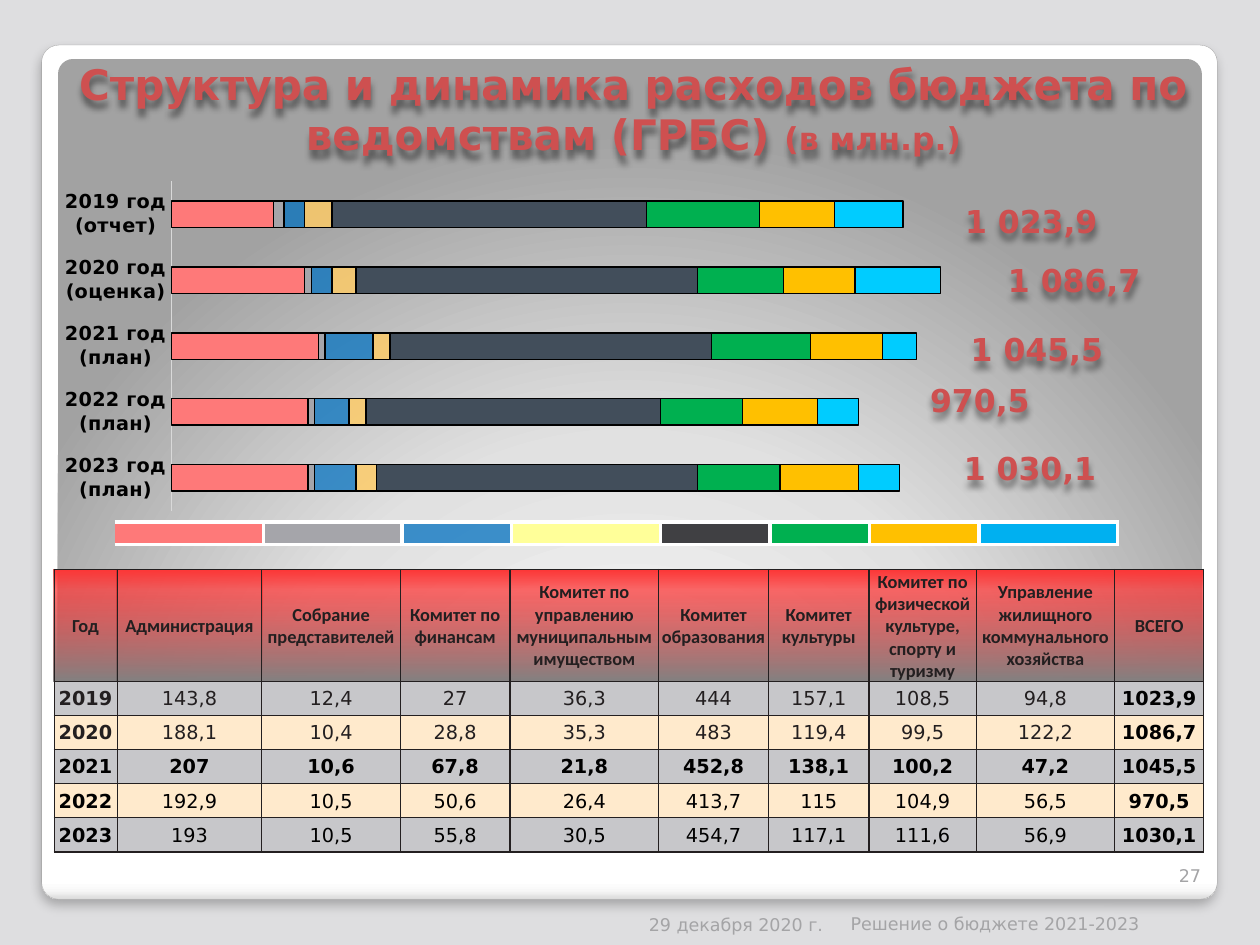
from lxml.etree import SubElement
from pptx import Presentation
from pptx.chart.data import CategoryChartData
from pptx.dml.color import RGBColor
from pptx.enum.chart import XL_CHART_TYPE, XL_TICK_MARK
from pptx.enum.shapes import MSO_SHAPE
from pptx.enum.text import MSO_ANCHOR, MSO_AUTO_SIZE, PP_ALIGN
from pptx.oxml import parse_xml
from pptx.oxml.ns import nsdecls, qn
from pptx.util import Cm, Pt

FONT = "DejaVu Sans"
BLACK = RGBColor(0, 0, 0)
INK = RGBColor(0x23, 0x1F, 0x20)
RED = RGBColor(0xCE, 0x50, 0x50)
PALE = RGBColor(0xA4, 0xA4, 0xA6)
EDGE = RGBColor(0xA4, 0xA4, 0xA4)
BACK = RGBColor(0xDE, 0xDE, 0xE0)
AXIS = RGBColor(0xD9, 0xD9, 0xD9)
GREY = RGBColor(0xC7, 0xC7, 0xCA)
CREAM = RGBColor(0xFF, 0xEA, 0xCC)
ROSE = RGBColor(0xFE, 0x79, 0x79)
ASH = RGBColor(0xA5, 0xA5, 0xAA)
BLUE = RGBColor(0x00, 0x70, 0xC0)
SAND = RGBColor(0xFF, 0xCC, 0x66)
LEMON = RGBColor(0xFF, 0xFF, 0x99)
SLATE = RGBColor(0x42, 0x4E, 0x5B)
COAL = RGBColor(0x36, 0x36, 0x39)
GREEN = RGBColor(0x00, 0xB0, 0x50)
GOLD = RGBColor(0xFF, 0xC0, 0x00)
CYAN = RGBColor(0x00, 0xCC, 0xFF)
SKY = RGBColor(0x00, 0xB0, 0xF0)


def paint(fill, color, alpha=100):
    fill.solid()
    fill.fore_color.rgb = color
    if alpha < 100:
        tone = fill._xPr.find(".//" + qn("a:srgbClr"))
        SubElement(tone, qn("a:alpha"), val=str(alpha * 1000))


def blend(fill, stops, course):
    fill.background()
    marks = "".join(
        f'<a:gs pos="{pos * 1000}"><a:srgbClr val="{tone}">'
        f'<a:alpha val="{alpha * 1000}"/></a:srgbClr></a:gs>'
        for pos, tone, alpha in stops)
    node = parse_xml(f'<a:gradFill {nsdecls("a")} rotWithShape="1">'
                     f'<a:gsLst>{marks}</a:gsLst>{course}</a:gradFill>')
    blank = fill._xPr.find(qn("a:noFill"))
    blank.getparent().replace(blank, node)


deck = Presentation()
deck.slide_width, deck.slide_height = Cm(25.4), Cm(19.05)
slide = deck.slides.add_slide(deck.slide_layouts[5])
shapes = slide.shapes
paint(slide.background.fill, BACK)

DOWN = '<a:lin ang="5400000" scaled="0"/>'
UP = '<a:lin ang="16200000" scaled="0"/>'
GLOW = ('<a:path path="circle">'
        '<a:fillToRect l="50000" t="175000" r="50000" b="-75000"/></a:path>')
panels = []
for x, y, w, h, stops, course in (
    (0.84, 0.91, 23.7, 17.22, [(0, "FFFFFF", 100), (98, "FFFFFF", 100),
                               (99, "F7F7F7", 100), (100, "DADADA", 100)], DOWN),
    (1.17, 1.19, 23.06, 15.24, [(0, "FFFFFF", 100), (55, "E1E1E1", 100),
                                (100, "A2A2A2", 100)], GLOW),
):
    panel = shapes.add_shape(MSO_SHAPE.ROUNDED_RECTANGLE, Cm(x), Cm(y), Cm(w), Cm(h))
    panel.adjustments[0] = 0.02
    panel.line.fill.background()
    blend(panel.fill, stops, course)
    panel.shadow.inherit = False
    panels.append(panel)
frame, inner = panels
frame.line.color.rgb = EDGE
frame.line.width = Pt(0.16)
shades = [(frame, 6, 4, 25)]

title = shapes.title
inner.element.addnext(title.element)
title.left, title.top, title.width, title.height = Cm(1.3), Cm(1.32), Cm(22.94), Cm(2.01)
head = title.text_frame
head.auto_size = MSO_AUTO_SIZE.NONE
head.vertical_anchor = MSO_ANCHOR.BOTTOM
para = head.paragraphs[0]
para.alignment = PP_ALIGN.CENTER
para.font.name, para.font.bold, para.font.color.rgb = FONT, True, RED
for text, size in (("Структура и динамика расходов бюджета по ведомствам (ГРБС) ", 24),
                   ("(в млн.р.)", 18)):
    run = para.add_run()
    run.text = text
    run.font.size = Pt(size)
shades.append((title, 4, 4, 45))

data = CategoryChartData()
data.categories = ["2023 год (план)", "2022 год (план)", "2021 год (план)",
                   "2020 год (оценка)", "2019 год (отчет)"]
bars = [
    ((40, 40, 43, 39, 30), ROSE, 100), ((2, 2, 2, 2, 3), ASH, 100),
    ((12, 10, 14, 6, 6), BLUE, 73), ((6, 5, 5, 7, 8), SAND, 82),
    ((94, 86, 94, 100, 92), SLATE, 100), ((24, 24, 29, 25, 33), GREEN, 100),
    ((23, 22, 21, 21, 22), GOLD, 100), ((12, 12, 10, 25, 20), CYAN, 100),
]
for num, (vals, color, alpha) in enumerate(bars, 1):
    data.add_series(f"Series {num}", vals)
chart = shapes.add_chart(XL_CHART_TYPE.BAR_STACKED, Cm(0.3), Cm(3.33),
                         Cm(23.01), Cm(9.6), data).chart
chart.has_legend = chart.has_title = False
chart.font.name, chart.font.size, chart.font.color.rgb = FONT, Pt(10), BLACK
plot = chart.plots[0]
plot.gap_width, plot.overlap, plot.vary_by_categories = 150, 100, False
for series, (vals, color, alpha) in zip(plot.series, bars):
    paint(series.format.fill, color, alpha)
    series.format.line.color.rgb = BLACK
    series.format.line.width = Pt(0.75)
years = chart.category_axis
years.major_tick_mark = years.minor_tick_mark = XL_TICK_MARK.NONE
years.format.line.color.rgb = AXIS
years.format.line.width = Pt(0.75)
font = years.tick_labels.font
font.name, font.size, font.bold, font.color.rgb = FONT, Pt(11), True, BLACK
scale = chart.value_axis
scale.minimum_scale, scale.maximum_scale = 0, 250
scale.has_major_gridlines = scale.visible = False
area = chart._chartSpace.find(".//" + qn("c:plotArea"))
for old in area.findall(qn("c:layout")):
    area.remove(old)
area.insert(0, parse_xml(
    f'<c:layout {nsdecls("c")}><c:manualLayout><c:layoutTarget val="inner"/>'
    '<c:xMode val="edge"/><c:yMode val="edge"/><c:x val="0.137"/><c:y val="0.034"/>'
    '<c:w val="0.749"/><c:h val="0.692"/></c:manualLayout></c:layout>'))

notes = [
    ("27", 23.19, 16.97, 1.02, PP_ALIGN.RIGHT),
    ("29 декабря 2020 г.", 10.49, 17.96, 6.1, PP_ALIGN.RIGHT),
    ("Решение о бюджете 2021-2023", 17.15, 17.93, 6.1, PP_ALIGN.LEFT),
    ("1 023,9", 19.1, 3.94, 3.38, PP_ALIGN.CENTER),
    ("1 086,7", 20.04, 5.13, 3.23, PP_ALIGN.CENTER),
    ("1 045,5", 19.1, 6.53, 3.61, PP_ALIGN.CENTER),
    ("970,5", 18.36, 7.54, 2.79, PP_ALIGN.CENTER),
    ("1 030,1", 19.1, 8.92, 3.33, PP_ALIGN.CENTER),
]
for text, x, y, w, align in notes:
    box = shapes.add_textbox(Cm(x), Cm(y), Cm(w), Cm(1.02))
    frame = box.text_frame
    frame.word_wrap = True
    frame.margin_left = frame.margin_right = 0
    frame.vertical_anchor = MSO_ANCHOR.BOTTOM
    para = frame.paragraphs[0]
    para.text, para.alignment = text, align
    total = align == PP_ALIGN.CENTER
    font = para.font
    font.name, font.bold = FONT, total
    font.size, font.color.rgb = (Pt(18), RED) if total else (Pt(10), PALE)
    if total:
        shades.append((box, 4, 4, 45))

for shape, blur, dist, alpha in shades:
    shape.shadow.inherit = False
    shape.element.spPr.find(qn("a:effectLst")).append(parse_xml(
        f'<a:outerShdw {nsdecls("a")} blurRad="{Pt(blur)}" dist="{Pt(dist)}" '
        f'dir="5400000" rotWithShape="0"><a:srgbClr val="000000">'
        f'<a:alpha val="{alpha * 1000}"/></a:srgbClr></a:outerShdw>'))

rows = [
    ["Год", "Администрация", "Собрание представителей", "Комитет по финансам",
     "Комитет по управлению муниципальным имуществом", "Комитет образования",
     "Комитет культуры", "Комитет по физической культуре, спорту и туризму",
     "Управление жилищного коммунального хозяйства", "ВСЕГО"],
    "2019 143,8 12,4 27 36,3 444 157,1 108,5 94,8 1023,9".split(),
    "2020 188,1 10,4 28,8 35,3 483 119,4 99,5 122,2 1086,7".split(),
    "2021 207 10,6 67,8 21,8 452,8 138,1 100,2 47,2 1045,5".split(),
    "2022 192,9 10,5 50,6 26,4 413,7 115 104,9 56,5 970,5".split(),
    "2023 193 10,5 55,8 30,5 454,7 117,1 111,6 56,9 1030,1".split(),
]
wide = [1.27, 2.92, 2.79, 2.21, 3, 2.21, 2.03, 2.16, 2.79, 1.8]
tall = [2.18] + [0.69] * 5
table = shapes.add_table(6, 10, Cm(1.09), Cm(11.48), Cm(sum(wide)), Cm(sum(tall))).table
keys = [(ROSE, 100), (ASH, 100), (BLUE, 74), (LEMON, 100),
        (COAL, 94), (GREEN, 100), (GOLD, 100), (SKY, 100)]
spans = [3, 2.79, 2.21, 3, 2.21, 2.01, 2.21, 2.79]
legend = shapes.add_table(1, 8, Cm(2.31), Cm(10.52), Cm(sum(spans)), Cm(0.46)).table

for r, row in enumerate(rows):
    for c, text in enumerate(row):
        cell = table.cell(r, c)
        para = cell.text_frame.paragraphs[0]
        para.text, para.alignment = text, PP_ALIGN.CENTER
        font = para.font
        font.name, font.size = (FONT, Pt(11)) if r else ("Calibri", Pt(10.5))
        font.bold = r in (0, 3) or c in (0, 9)
        font.color.rgb = BLACK if r > 2 or (r and c == 9) else INK
        if r:
            paint(cell.fill, GREY if r % 2 else CREAM)
        else:
            blend(cell.fill, [(0, "828282", 100), (82, "FF3434", 72),
                              (100, "FE3737", 100)], UP)
for cell, (color, alpha) in zip(legend.iter_cells(), keys):
    paint(cell.fill, color, alpha)
    cell.text_frame.paragraphs[0]._p.get_or_add_endParaRPr().set("sz", "800")

for grid, widths, heights, tone, width in (
    (table, wide, tall, INK, 0.75), (legend, spans, [0.46], "FFFFFF", 2.25),
):
    grid.first_row = grid.horz_banding = False
    for col, size in zip(grid.columns, widths):
        col.width = Cm(size)
    for row, size in zip(grid.rows, heights):
        row.height = Cm(size)
    for n, cell in enumerate(grid.iter_cells()):
        cell.vertical_anchor = MSO_ANCHOR.MIDDLE
        cell.margin_left = cell.margin_right = cell.margin_top = Cm(0.03)
        cell.margin_bottom = 0
        for k, side in enumerate(("lnL", "lnR", "lnT", "lnB")):
            bare = grid is legend and n == k == 0
            ink = "<a:noFill/>" if bare else f'<a:solidFill><a:srgbClr val="{tone}"/></a:solidFill>'
            cell._tc.get_or_add_tcPr().insert(k, parse_xml(
                f'<a:{side} {nsdecls("a")} w="{Pt(width)}">{ink}</a:{side}>'))

deck.save("out.pptx")
